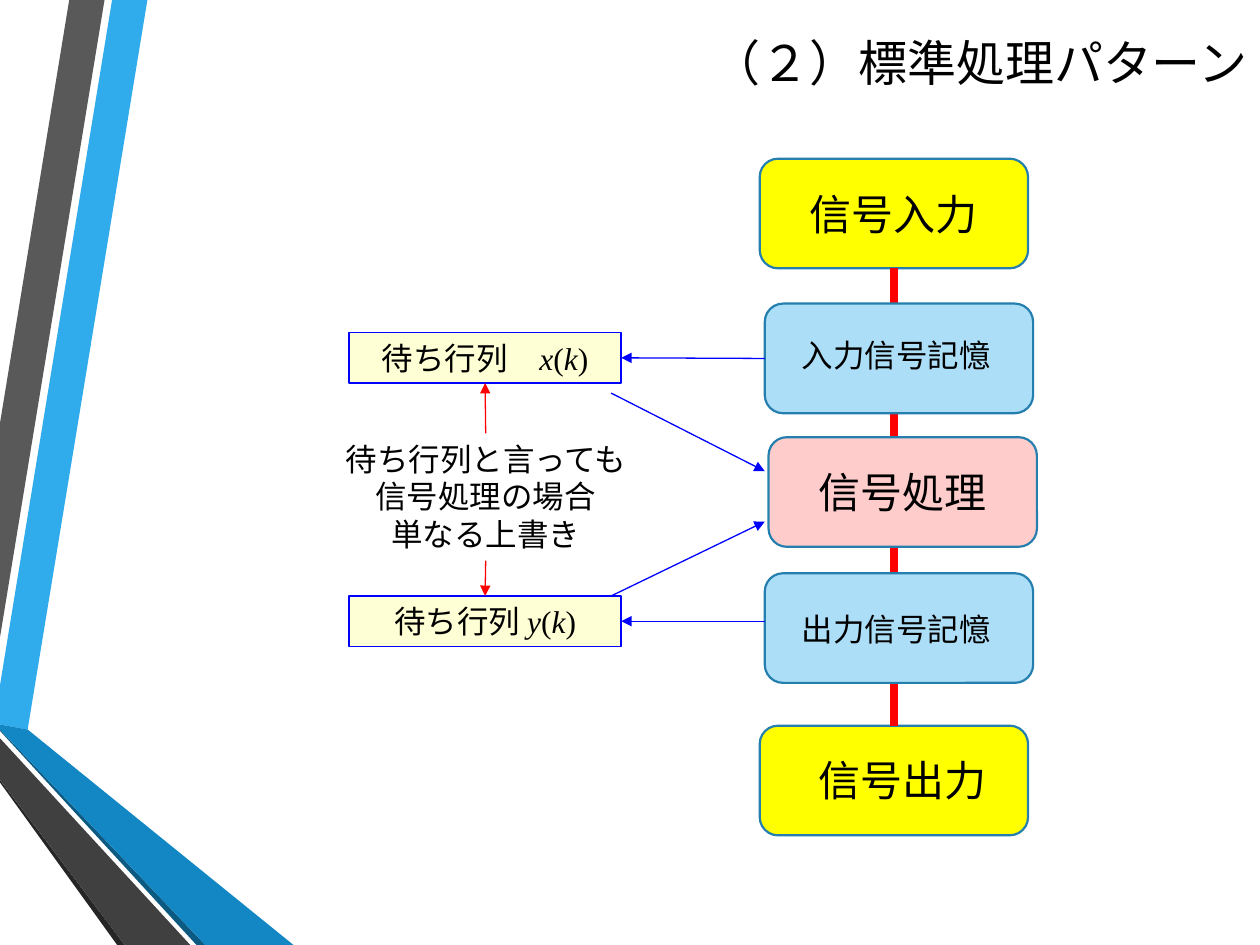
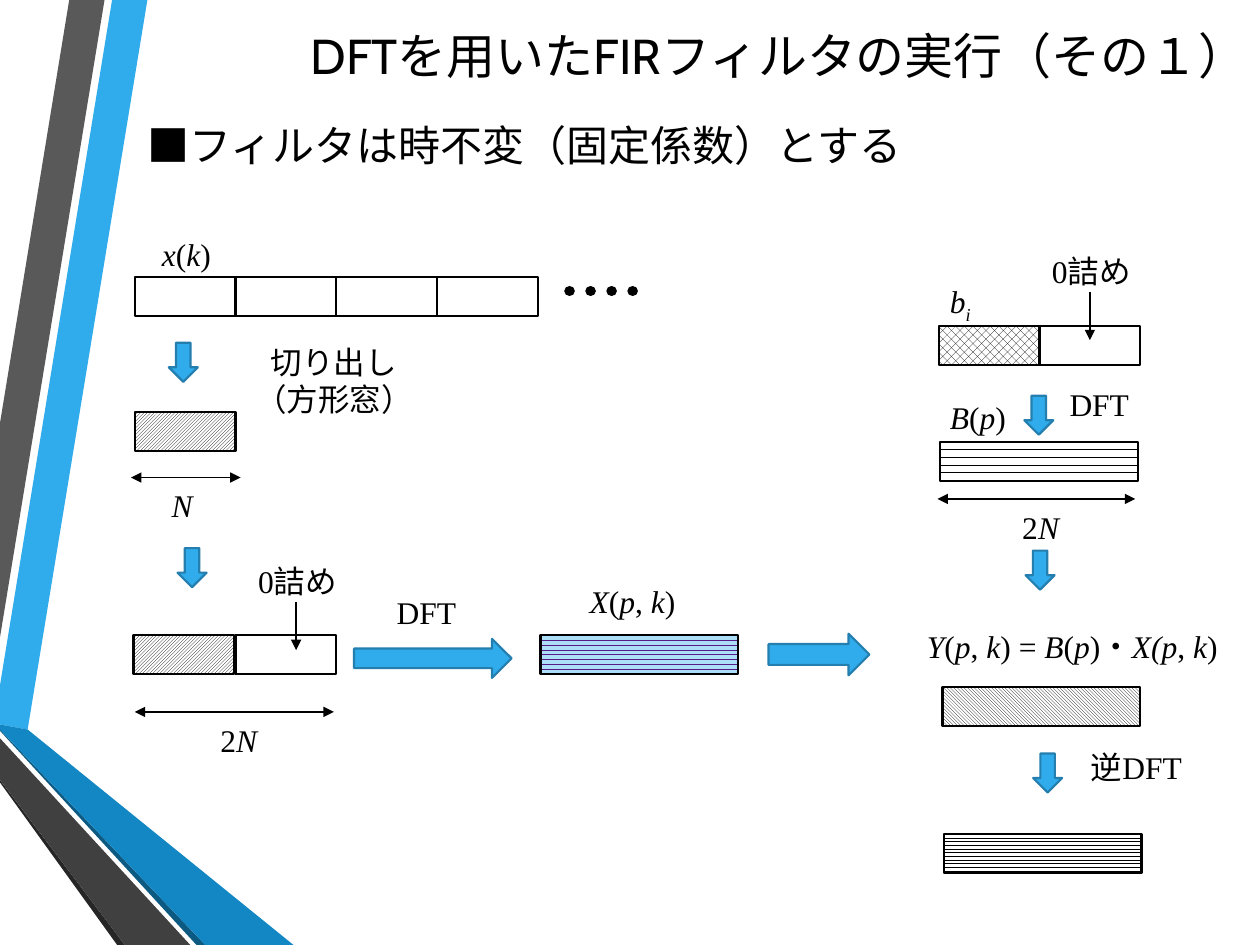
from dataclasses import dataclass

from lxml import etree
from pptx import Presentation
from pptx.dml.color import RGBColor
from pptx.enum import dml, shapes, text
from pptx.oxml import ns
from pptx.util import Inches, Pt

SHAPE = shapes.MSO_SHAPE
PATTERN = dml.MSO_PATTERN
CENTER = text.PP_ALIGN.CENTER


@dataclass(frozen=True)
class Theme:
    title_font: str = "Cabin"
    body_font: str = "Times New Roman"
    title_size: float = 28
    large_size: float = 24
    body_size: float = 18
    outline: float = 1.25
    thin: float = 0.75
    black: str = "000000"
    white: str = "FFFFFF"
    accent: str = "30ACEC"
    accent_line: str = "247FAF"
    pale_blue: str = "ACDEF7"
    yellow: str = "FFFF00"
    pink: str = "FFCCCC"
    cream: str = "FFFFD5"
    red: str = "FF0000"
    blue: str = "0000FF"
    purple: str = "541B89"


THEME = Theme()
HANG = 0.29
CELL_WIDTH, CELL_HEIGHT, SPECTRUM_WIDTH = 0.8, 0.31, 1.57

BANDS = [
    (THEME.accent, [(0, 5.44), (0, 5.75), (0.22, 5.79), (1.17, 0), (0.89, 0)]),
    ("595959", [(0.83, 0), (0.55, 0), (0, 3.36), (0, 5.06)]),
    ("262626", [(0, 6.19), (0, 6.21), (0.93, 7.5), (0.99, 7.5)]),
    ("0C5A82", [(0, 5.79), (0, 5.8), (1.56, 7.5), (1.63, 7.5)]),
    ("1287C3", [(0, 5.79), (1.63, 7.5), (2.33, 7.5), (0.22, 5.79), (0, 5.75)]),
    ("404040", [(0, 6.19), (0.99, 7.5), (1.51, 7.5), (0, 5.86)]),
]


def rgb(value):
    return RGBColor.from_string(value)


def inches(*lengths):
    return [Inches(length) for length in lengths]


def add_bands(slide, layout):
    for index, (color, points) in enumerate(BANDS):
        start, *rest = [inches(*point) for point in points]
        builder = slide.shapes.build_freeform(*start)
        builder.add_line_segments(rest, close=True)
        band = builder.convert_to_shape()
        band.shadow.inherit = False
        band.fill.solid()
        band.fill.fore_color.rgb = rgb(color)
        band.line.fill.background()
        band.element.xpath(".//p:cNvPr")[0].set("id", str(100 + index))
        layout.shapes.element.insert(2 + index, band.element)


def format_paragraph(paragraph, size, font, align=None, hang=0):
    paragraph.alignment = align
    paragraph.font.size = Pt(size)
    paragraph.font.name = font
    paragraph.font.color.rgb = rgb(THEME.black)
    if hang:
        properties = paragraph._p.get_or_add_pPr()
        properties.set("marL", str(Inches(hang)))
        properties.set("indent", str(-Inches(hang)))


def write(shape, lines, size=THEME.body_size, align=None, hang=0):
    """Text between asterisks is italic."""
    frame = shape.text_frame
    frame.word_wrap = True
    frame.auto_size = text.MSO_AUTO_SIZE.SHAPE_TO_FIT_TEXT
    for number, line in enumerate(lines.split("\n")):
        paragraph = frame.add_paragraph() if number else frame.paragraphs[0]
        format_paragraph(paragraph, size, THEME.body_font, align, hang)
        for index, part in enumerate(line.split("*")):
            if part:
                run = paragraph.add_run()
                run.text = part
                if index % 2:
                    run.font.italic = True


def add_title(slide, title, height):
    placeholder = slide.shapes.title
    placeholder.left, placeholder.top, placeholder.width, placeholder.height = inches(
        1.57, 0, 8.43, height)
    frame = placeholder.text_frame
    frame.text = title
    frame.auto_size = text.MSO_AUTO_SIZE.NONE
    frame.vertical_anchor = text.MSO_ANCHOR.MIDDLE
    format_paragraph(frame.paragraphs[0], THEME.title_size, THEME.title_font,
                     text.PP_ALIGN.RIGHT)


def add_label(slide, box, lines, **style):
    label = slide.shapes.add_textbox(*inches(*box))
    write(label, lines, **style)
    return label


def add_box(slide, kind, box, fill, line, width=THEME.outline):
    shape = slide.shapes.add_shape(kind, *inches(*box))
    shape.shadow.inherit = False
    shape.fill.solid()
    shape.fill.fore_color.rgb = rgb(fill)
    shape.line.color.rgb = rgb(line)
    shape.line.width = Pt(width)
    return shape


def add_line(slide, start, end, color=THEME.black, width=THEME.thin, head=False, tail=False,
             begin_at=None, end_at=None):
    line = slide.shapes.add_connector(shapes.MSO_CONNECTOR.STRAIGHT, *inches(*start, *end))
    if begin_at:
        line.begin_connect(*begin_at)
    if end_at:
        line.end_connect(*end_at)
    line.line.color.rgb = rgb(color)
    line.line.width = Pt(width)
    properties = line.element.spPr
    outline = properties.find(ns.qn("a:ln"))
    for tag, wanted in (("a:headEnd", head), ("a:tailEnd", tail)):
        if wanted:
            etree.SubElement(outline, ns.qn(tag), type="triangle")
    etree.SubElement(properties, ns.qn("a:effectLst"))
    return line


def add_stage(slide, left, top, fill):
    return add_box(slide, SHAPE.ROUNDED_RECTANGLE, (left, top, 2.13, 0.87), fill,
                   THEME.accent_line)


def add_queue(slide, top, lines):
    queue = add_box(slide, SHAPE.RECTANGLE, (2.77, top, 2.16, 0.4), THEME.cream, THEME.blue,
                    THEME.thin)
    write(queue, lines, align=CENTER)
    return queue


def add_block(slide, left, top, width=CELL_WIDTH, pattern=None, ink=THEME.black,
              paper=THEME.white):
    block = add_box(slide, SHAPE.RECTANGLE, (left, top, width, CELL_HEIGHT), paper, THEME.black)
    if pattern:
        block.fill.patterned()
        block.fill.pattern = pattern
        block.fill.fore_color.rgb = rgb(ink)
        block.fill.back_color.rgb = rgb(paper)


def add_block_arrow(slide, kind, left, top, width=0.23, height=0.31):
    add_box(slide, kind, (left, top, width, height), THEME.accent, THEME.accent_line)


def add_span(slide, left, top, width, label):
    add_line(slide, (left, top), (left + width, top), head=True, tail=True)
    add_label(slide, (left + width / 2 - 0.21, top + 0.02, 0.53, 0.4), label, hang=HANG)


def add_zero_padding(slide, left, top):
    add_label(slide, (left, top, 0.97, 0.4), "0詰め", hang=HANG)
    add_line(slide, (left + 0.3 + 0.1, top + 0.37), (left + 0.4, top + 0.75), tail=True)


def fill_pattern_slide(slide):
    add_title(slide, "（２）標準処理パターン", 0.98)
    signal_in = add_stage(slide, 6.03, 1.26, THEME.yellow)
    signal_out = add_stage(slide, 6.03, 5.76, THEME.yellow)
    add_line(slide, (7.1, 2.13), (7.1, 5.76), THEME.red, 4.5,
             begin_at=(signal_in, 2), end_at=(signal_out, 0))
    input_memory = add_stage(slide, 6.07, 2.41, THEME.pale_blue)
    add_stage(slide, 6.07, 4.55, THEME.pale_blue)
    add_stage(slide, 6.1, 3.47, THEME.pink)
    for left, top, name in ((6.26, 1.45, "信号入力"), (6.33, 3.65, "信号処理"),
                            (6.33, 5.94, "信号出力")):
        add_label(slide, (left, top, 1.67, 0.5), name, size=THEME.large_size, align=CENTER)
    for top, name in ((2.62, "入力信号記憶"), (4.79, "出力信号記憶")):
        add_label(slide, (6.05, top, 2.13, 0.4), name, align=CENTER)

    input_queue = add_queue(slide, 2.64, "待ち行列　*x*(*k*)")
    output_queue = add_queue(slide, 4.73, "待ち行列 *y*(*k*)")
    add_line(slide, (6.07, 2.84), (4.93, 2.84), THEME.blue, tail=True,
             begin_at=(input_memory, 1), end_at=(input_queue, 3))
    add_line(slide, (6.07, 4.93), (4.93, 4.93), THEME.blue, tail=True,
             end_at=(output_queue, 3))
    add_line(slide, (4.85, 4.73), (6.07, 4.14), THEME.blue, tail=True)
    add_line(slide, (4.85, 3.12), (6.07, 3.74), THEME.blue, tail=True)

    remark = add_label(slide, (2.5, 3.44, 2.71, 1.01),
                       "待ち行列と言っても\n信号処理の場合\n単なる上書き", align=CENTER)
    add_line(slide, (3.86, 3.44), (3.85, 3.04), THEME.red, tail=True,
             begin_at=(remark, 0), end_at=(input_queue, 2))
    add_line(slide, (3.86, 4.45), (3.85, 4.73), THEME.red, tail=True,
             begin_at=(remark, 2), end_at=(output_queue, 0))


def add_input_path(slide):
    for index in range(4):
        add_block(slide, 1.07 + index * CELL_WIDTH, 2.2)
    dots = add_line(slide, (4.52, 2.31), (5.18, 2.31), width=6)
    dots.line.dash_style = dml.MSO_LINE.ROUND_DOT
    dots.element.spPr.find(ns.qn("a:ln")).set("cap", "rnd")
    add_label(slide, (0.86, 1.82, 1.24, 0.4), "*x*(*k*)", align=CENTER, hang=HANG)
    add_block_arrow(slide, SHAPE.DOWN_ARROW, 1.34, 2.72)
    add_label(slide, (1.83, 2.67, 1.64, 0.71), "切り出し\n（方形窓）", align=CENTER, hang=HANG)
    add_block(slide, 1.07, 3.27, pattern=PATTERN.DARK_UPWARD_DIAGONAL)
    add_span(slide, 1.04, 3.79, 0.87, "*N*")
    add_block_arrow(slide, SHAPE.DOWN_ARROW, 1.41, 4.35)
    add_block(slide, 1.06, 5.04, pattern=PATTERN.DARK_UPWARD_DIAGONAL)
    add_block(slide, 1.87, 5.04)
    add_zero_padding(slide, 1.95 - 0.1 + 0.1, 4.41)
    add_span(slide, 1.07, 5.65, 1.58, "2*N*")
    add_block_arrow(slide, SHAPE.RIGHT_ARROW, 2.81, 5.07, 1.25)
    add_label(slide, (3.05, 4.66, 0.97, 0.4), "DFT", hang=HANG)
    add_label(slide, (4.4, 4.57, 1.24, 0.4), "*X*(*p*,* k*)", align=CENTER, hang=HANG)
    add_block(slide, 4.29, 5.04, SPECTRUM_WIDTH, PATTERN.WAVE, THEME.purple, THEME.pale_blue)
    add_block_arrow(slide, SHAPE.RIGHT_ARROW, 6.1, 5.03, 0.8, 0.33)


def add_filter_path(slide):
    coefficient = add_label(slide, (7.44, 2.19, 0.72, 0.4), "*b**i*", hang=HANG)
    subscript = coefficient.text_frame.paragraphs[0].runs[1]
    subscript._r.get_or_add_rPr().set("baseline", "-25000")
    add_block(slide, 7.45, 2.59, pattern=PATTERN.PERCENT_50)
    add_block(slide, 8.25, 2.59)
    add_zero_padding(slide, 8.25, 1.95)
    for left, top in ((8.13, 3.14), (8.14, 4.37), (8.2, 5.98)):
        add_block_arrow(slide, SHAPE.DOWN_ARROW, left, top)
    add_label(slide, (8.39, 3.01, 0.97, 0.4), "DFT", hang=HANG)
    add_label(slide, (7.44, 3.11, 0.76, 0.4), "*B*(*p*)", hang=HANG)
    add_span(slide, 7.44, 3.96, SPECTRUM_WIDTH, "2*N*")
    add_label(slide, (7.02, 4.93, 2.98, 0.4), "*Y*(*p*,* k*) = *B*(*p*)・*X(p*, *k*)",
              align=CENTER, hang=HANG)
    add_label(slide, (8.56, 5.89, 0.97, 0.4), "逆DFT", hang=HANG)
    for left, top, pattern in ((7.46, 3.51, PATTERN.DASHED_HORIZONTAL),
                               (7.48, 5.45, PATTERN.LIGHT_DOWNWARD_DIAGONAL),
                               (7.49, 6.62, PATTERN.ZIG_ZAG)):
        add_block(slide, left, top, SPECTRUM_WIDTH, pattern)


def fill_filter_slide(slide):
    add_title(slide, "DFTを用いたFIRフィルタの実行（その１）", 0.87)
    add_label(slide, (1.07, 0.9, 9, 0.5), "■フィルタは時不変（固定係数）とする",
              size=THEME.large_size, hang=HANG)
    add_input_path(slide)
    add_filter_path(slide)


def main():
    presentation = Presentation()
    presentation.slide_width, presentation.slide_height = inches(10, 7.5)
    layout = presentation.slide_layouts[5]
    pattern_slide = presentation.slides.add_slide(layout)
    add_bands(pattern_slide, layout)
    fill_pattern_slide(pattern_slide)
    fill_filter_slide(presentation.slides.add_slide(layout))
    presentation.save("out.pptx")


if __name__ == "__main__":
    main()
